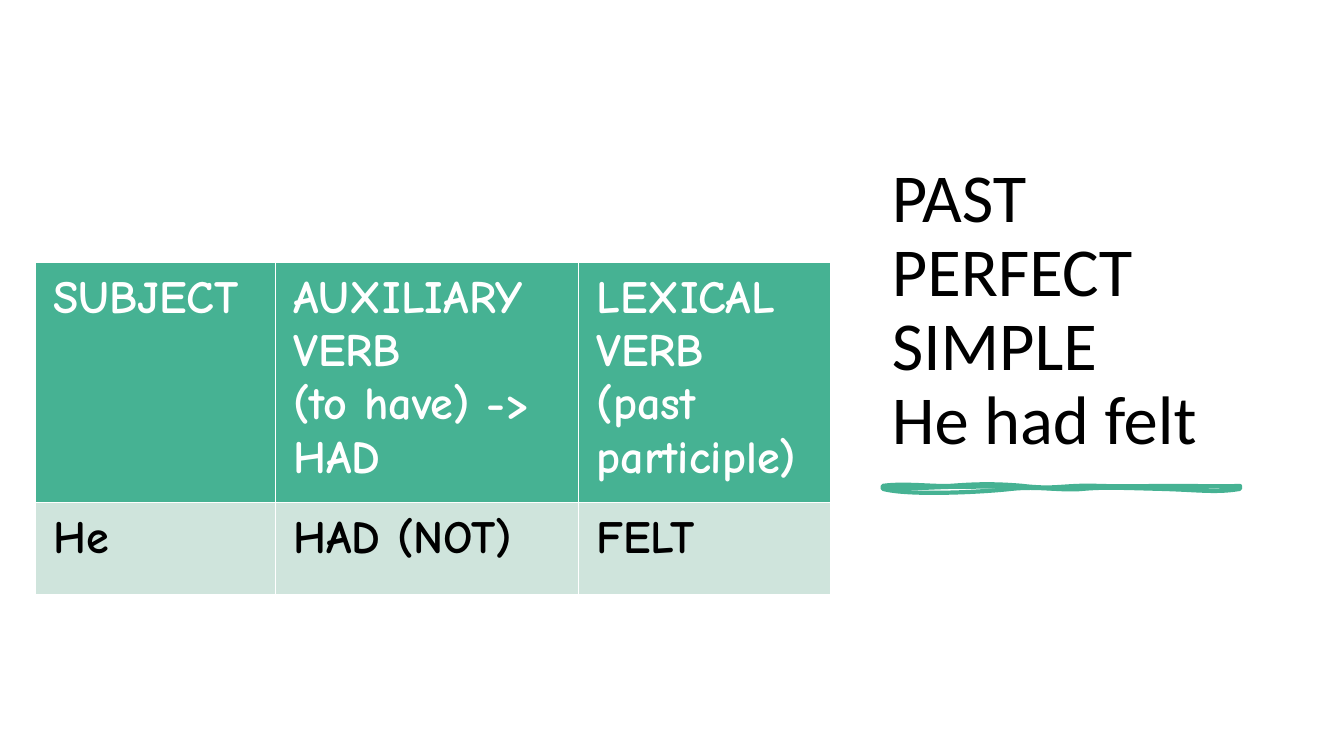
from copy import deepcopy
from pptx import Presentation
from pptx import util as u
from pptx.dml.color import RGBColor
from pptx.enum import shapes, text
from pptx.oxml.ns import qn

HUES = {"white": "FFFFFF", "black": "000000", "green": "46B293", "pale": "CFE4DC"}
ROWS = [
    ["SUBJECT", "AUXILIARY VERB\n(to have) -> HAD", "LEXICAL VERB (past participle)"],
    ["He", "HAD (NOT)", "FELT"],
]
COLS = (171.4, 216.7, 180)
HIGHS = (97.2, 65.5)
SPAN = 354
EDGE = [
    (0, 0), (21, -3), (52, 1), (67, 0), (82, -1), (104, -3), (138, 0),
    (172, 4), (177, -1), (212, 0), (248, 1), (261, 0), (287, 0),
    (313, 0), (335, 1), (354, 0), (354, 1), (354, 3), (354, 3),
    (330, 7), (314, 4), (276, 3), (238, 2), (219, 1), (198, 3),
    (177, 5), (154, 0), (127, 3), (101, 6), (26, 10), (0, 3),
    (-1, 2), (0, 1), (0, 0),
]
BODY = [
    (0, 0), (32, -1), (34, 0), (67, 0), (100, 1), (109, -1), (127, 0),
    (145, 1), (179, 4), (205, 0), (231, -4), (254, 0), (273, 0),
    (291, 0), (315, 3), (354, 0), (354, 2), (354, 2), (354, 3),
    (329, 0), (306, 5), (283, 3), (261, 1), (242, 0), (205, 3),
    (169, 6), (166, 4), (145, 3), (124, 2), (100, 3), (74, 3),
    (48, 3), (29, 6), (0, 3), (0, 2), (0, 2), (0, 0),
]


def hue(name):
    """Return the named colour."""
    return RGBColor.from_string(HUES[name])


def write(frame, words, size=33, font="Comic Neue", tint="black", bold=False, space=None):
    """Fill a text frame with formatted words."""
    frame.word_wrap = True
    frame.text = words
    for para in frame.paragraphs:
        if space:
            para.line_spacing = space
        for run in para.runs:
            run.font.size = u.Pt(size)
            run.font.name = font
            run.font.bold = bold
            run.font.color.rgb = hue(tint)


def back(slide, wide, high):
    """Cover the slide with a white panel."""
    panel = slide.shapes.add_shape(shapes.MSO_SHAPE.RECTANGLE, 0, 0, wide, high)
    panel.shadow.inherit = False
    panel.fill.solid()
    panel.fill.fore_color.rgb = hue("white")
    panel.line.fill.background()


def bend(trace):
    """Turn each three line segments of an outline into one cubic curve."""
    lines = trace.findall(qn("a:lnTo"))
    for at in range(0, len(lines), 3):
        first, *rest = lines[at:at + 3]
        first.tag = qn("a:cubicBezTo")
        for line in rest:
            first.append(line[0])
            trace.remove(line)


def stroke(slide, left, top, wide):
    """Draw a brush stroke with a loose outline and a filled body."""
    unit = wide / SPAN
    edge, body = (
        [(u.Pt(left + x * unit), u.Pt(top + y * unit)) for x, y in nodes]
        for nodes in (EDGE, BODY))
    form = slide.shapes.build_freeform(*edge[0], scale=1.0)
    form.add_line_segments(edge[1:], close=True)
    form.move_to(*body[0])
    form.add_line_segments(body[1:], close=True)
    shape = form.convert_to_shape()
    shape.shadow.inherit = False
    shape.fill.solid()
    shape.fill.fore_color.rgb = hue("green")
    shape.line.color.rgb = hue("green")
    shape.line.width = u.Pt(3)
    rim = next(shape._element.iter(qn("a:path")))
    core = deepcopy(rim)
    cut = len(edge) + 1
    for part in list(rim)[cut:]:
        rim.remove(part)
    for part in list(core)[:cut]:
        core.remove(part)
    rim.set("fill", "none")
    core.set("stroke", "0")
    rim.addnext(core)
    bend(rim)
    bend(core)


def title(slide, left, top, wide, high):
    """Place the heading with a brush stroke under it."""
    box = slide.shapes.add_textbox(*map(u.Pt, (left, top, wide, high)))
    box.text_frame.vertical_anchor = text.MSO_ANCHOR.BOTTOM
    write(box.text_frame, "PAST PERFECT SIMPLE\vHe had felt", size=49, font="Calibri", space=0.9)
    stroke(slide, left + 0.7, top + high + 15.3, 255)


def grid(slide, left, top):
    """Place the table of verb forms."""
    frame = slide.shapes.add_table(
        len(HIGHS), len(COLS), *map(u.Pt, (left, top, sum(COLS), sum(HIGHS))))
    table = frame.table
    for col, wide in zip(table.columns, COLS):
        col.width = u.Pt(wide)
    for row, high in zip(table.rows, HIGHS):
        row.height = u.Pt(high)
    for r, row in enumerate(ROWS):
        for c, words in enumerate(row):
            cell = table.cell(r, c)
            cell.margin_left = cell.margin_right = u.Pt(13)
            cell.margin_top = cell.margin_bottom = u.Pt(6.5)
            cell.fill.solid()
            cell.fill.fore_color.rgb = hue("pale" if r else "green")
            write(cell.text_frame, words, tint="black" if r else "white", bold=True)


def main():
    """Build and save the slide."""
    deck = Presentation()
    deck.slide_width, deck.slide_height = u.Pt(960), u.Pt(540)
    slide = deck.slides.add_slide(deck.slide_layouts[6])
    back(slide, deck.slide_width, deck.slide_height)
    title(slide, 630, 51, 280.8, 280.8)
    grid(slide, 25.2, 187.5)
    deck.save("out.pptx")


if __name__ == "__main__":
    main()
